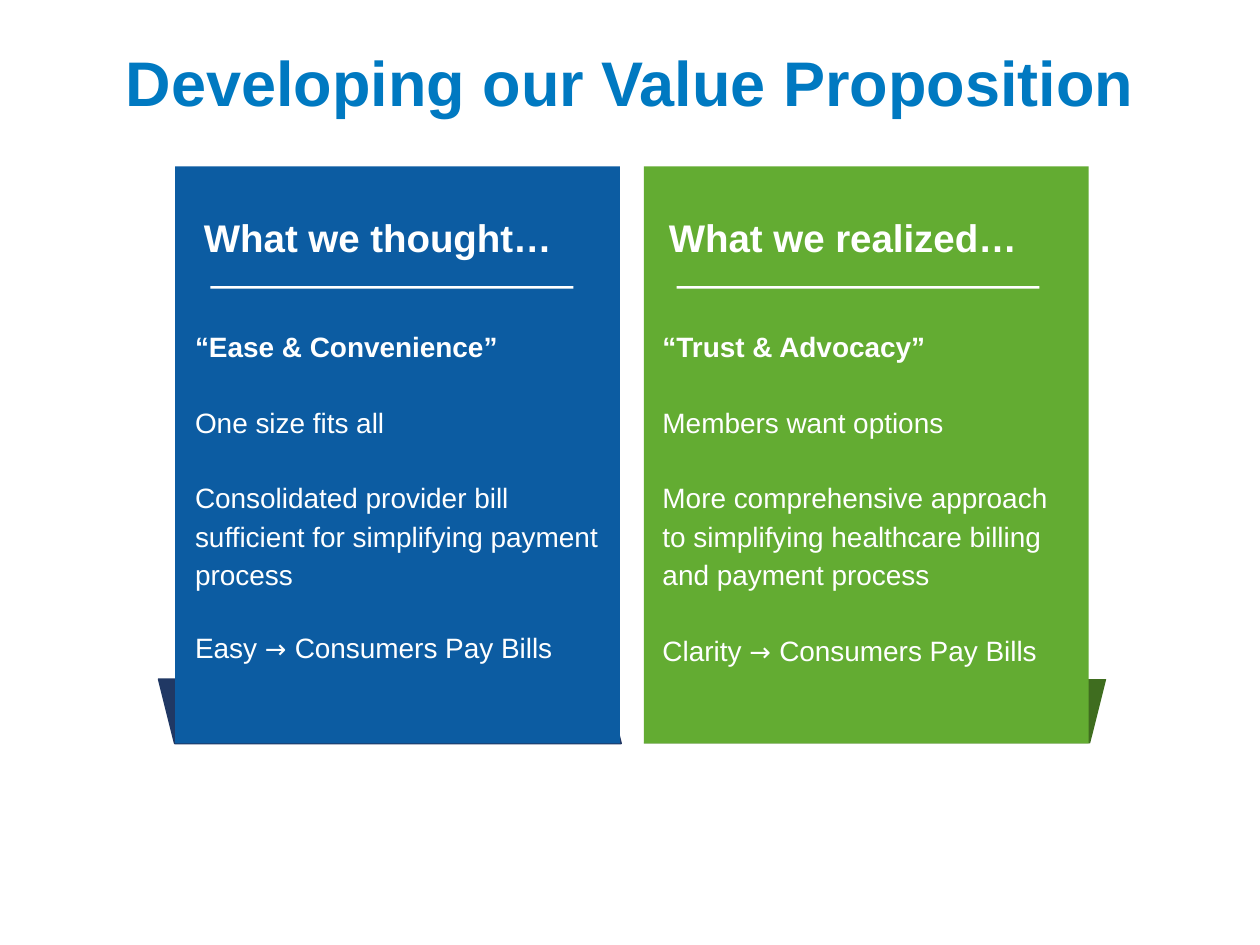
from pptx import Presentation
from pptx.dml.color import RGBColor
from pptx.enum.shapes import MSO_SHAPE
from pptx.enum.text import MSO_ANCHOR, PP_ALIGN
from pptx.util import Inches, Pt

WHITE = RGBColor(0xFF, 0xFF, 0xFF)
TITLE_BLUE = RGBColor(0x00, 0x79, 0xC1)
BLUE = RGBColor(0x0C, 0x5C, 0xA2)
NAVY = RGBColor(0x20, 0x38, 0x64)
GREEN = RGBColor(0x63, 0xAC, 0x32)
DARK_GREEN = RGBColor(0x3F, 0x6D, 0x1F)

# Content
TITLE = "Developing our Value Proposition"
PANELS = [
    dict(x=5.11, fold_x=5.11, head_x=5.21, rule_x=5.37, body_x=5.16,
         fill=GREEN, fold=DARK_GREEN, flip=False, last_gap=21,
         head="What we realized…", slogan="“Trust & Advocacy”",
         points=["Members want options",
                 "More comprehensive approach to simplifying healthcare "
                 "billing and payment process"],
         cause="Clarity "),
    dict(x=1.39, fold_x=1.26, head_x=1.52, rule_x=1.67, body_x=1.45,
         fill=BLUE, fold=NAVY, flip=True, last_gap=19.5,
         head="What we thought…", slogan="“Ease & Convenience”",
         points=["One size fits all",
                 "Consolidated provider bill sufficient for simplifying "
                 "payment process"],
         cause="Easy "),
]
RESULT = "Consumers Pay Bills"
PANEL_TOP, PANEL_W, PANEL_H = 1.32, 3.53, 4.58
FOLD_W, FOLD_H = 3.67, 0.51
GAP = 21  # points between body paragraphs


def add_block(slide, kind, x, y, w, h, color):
    sp = slide.shapes.add_shape(kind, Inches(x), Inches(y), Inches(w), Inches(h))
    sp.shadow.inherit = False
    sp.fill.solid()
    sp.fill.fore_color.rgb = color
    sp.line.fill.background()
    return sp


def add_box(slide, x, y, w, h):
    tf = slide.shapes.add_textbox(Inches(x), Inches(y), Inches(w), Inches(h)).text_frame
    tf.word_wrap = True
    return tf


def add_run(p, text, size, bold=False, color=WHITE, font="Arial"):
    r = p.add_run()
    r.text = text
    r.font.name, r.font.size, r.font.bold = font, Pt(size), bold
    r.font.color.rgb = color


def add_fold(slide, panel):
    sp = add_block(slide, MSO_SHAPE.PARALLELOGRAM, panel["fold_x"],
                   PANEL_TOP + PANEL_H - FOLD_H, FOLD_W, FOLD_H, panel["fold"])
    if panel["flip"]:
        sp._element.spPr.find(
            "{http://schemas.openxmlformats.org/drawingml/2006/main}xfrm").set("flipH", "1")
        sp.line.color.rgb = panel["fold"]
        sp.line.width = Pt(1)


def add_panel(slide, panel):
    add_block(slide, MSO_SHAPE.RECTANGLE, panel["x"], PANEL_TOP, PANEL_W, PANEL_H,
              panel["fill"])
    p = add_box(slide, panel["head_x"], 1.69, 3.22, 0.44).paragraphs[0]
    p.line_spacing = 0.9
    add_run(p, panel["head"], 22, bold=True)
    add_block(slide, MSO_SHAPE.RECTANGLE, panel["rule_x"], 2.27, 2.88, 0.02, WHITE)


def add_body(slide, panel):
    tf = add_box(slide, panel["body_x"], 2.53, 3.43, 3.19)
    p = tf.paragraphs[0]
    p.line_spacing = 1.15
    add_run(p, panel["slogan"], 16, bold=True)
    for text in panel["points"] + [panel["cause"]]:
        p = tf.add_paragraph()
        p.line_spacing = 1.15
        p.space_before = Pt(GAP)
        add_run(p, text, 16)
    p.space_before = Pt(panel["last_gap"])
    add_run(p, "→ ", 14.7, font="DejaVu Sans")
    add_run(p, RESULT, 16)


def main():
    prs = Presentation()
    prs.slide_width, prs.slide_height = Inches(10), Inches(7.5)
    s = prs.slides.add_slide(prs.slide_layouts[5])

    # Title
    title = s.shapes.title
    title.left, title.top = Inches(0), Inches(0.31)
    title.width, title.height = Inches(10), Inches(0.75)
    tf = title.text_frame
    tf.vertical_anchor = MSO_ANCHOR.MIDDLE
    p = tf.paragraphs[0]
    p.alignment = PP_ALIGN.CENTER
    p.line_spacing = 0.9
    add_run(p, TITLE, 36, bold=True, color=TITLE_BLUE)

    # Folds lie behind the panels, body text in front
    for add_part in (add_fold, add_panel, add_body):
        for panel in PANELS:
            add_part(s, panel)

    prs.save("out.pptx")


if __name__ == "__main__":
    main()
